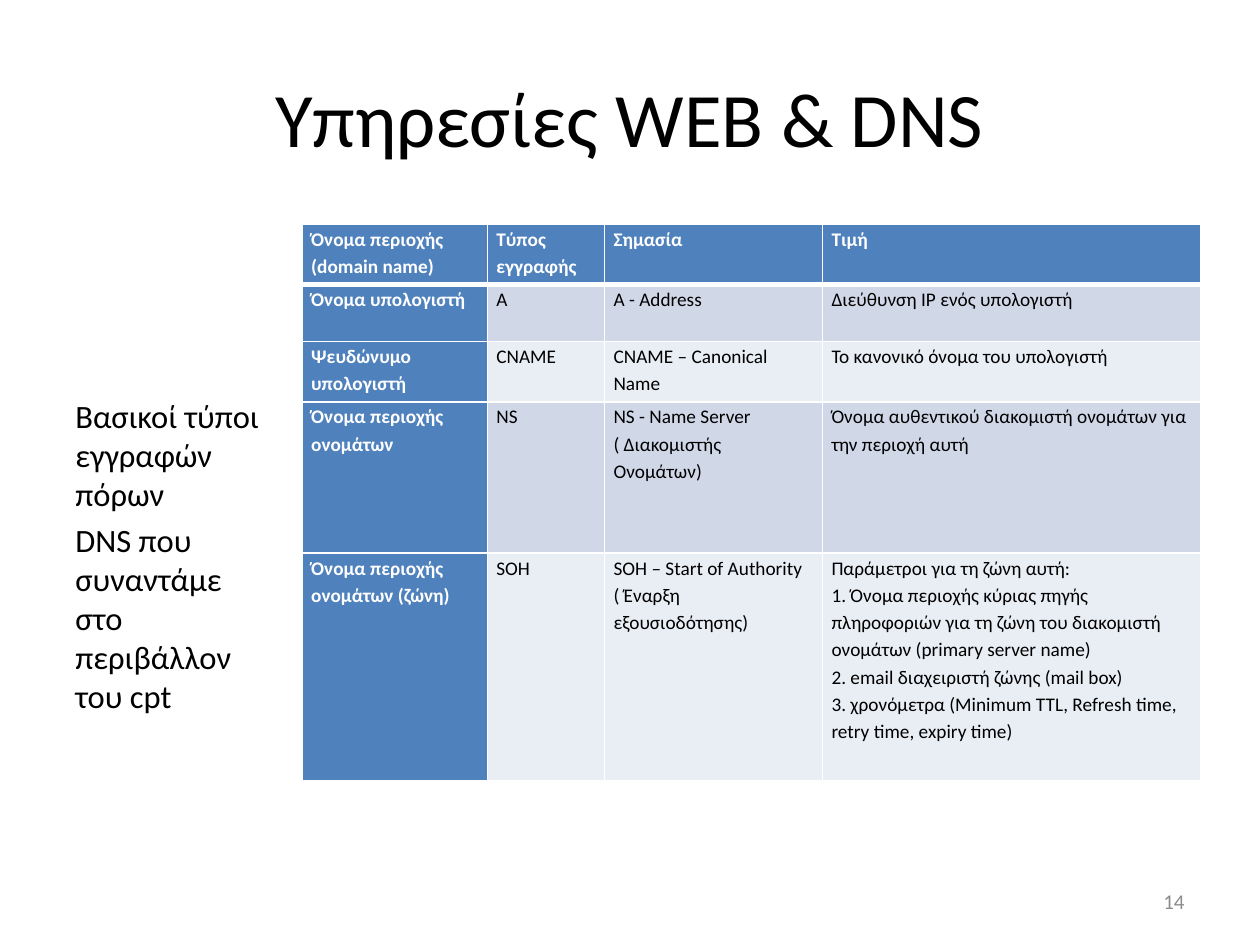
"""Build a slide with a table of the basic DNS record types."""
from lxml import etree
from pptx import Presentation
from pptx import util as u
from pptx.dml import color
from pptx.enum import text
from pptx.oxml import ns

HUES = {"ink": "000000", "white": "FFFFFF", "head": "4F81BD",
        "odd": "D0D8E8", "even": "E9EDF4", "page": "8C8C8C"}
WIDE = [1.47, 0.93, 1.73, 3]
HIGH = [0.48, 0.45, 0.48, 1.2, 1.81]
ROWS = [
    ["Όνομα περιοχής\n(domain name)", "Τύπος εγγραφής", "Σημασία", "Τιμή"],
    ["Όνομα υπολογιστή", "Α", "Α - Address", "Διεύθυνση IP ενός υπολογιστή"],
    ["Ψευδώνυμο υπολογιστή", "CNAME", "CNAME – Canonical Name",
     "Το κανονικό όνομα του υπολογιστή"],
    ["Όνομα περιοχής ονομάτων", "NS",
     "NS - Name Server\n( Διακομιστής Ονομάτων)",
     "Όνομα αυθεντικού διακομιστή ονομάτων για την περιοχή αυτή"],
    ["Όνομα περιοχής ονομάτων (ζώνη)", "SOH",
     "SOH – Start of Authority\n( Έναρξη εξουσιοδότησης)",
     "Παράμετροι για τη ζώνη αυτή:\n"
     "1. Όνομα περιοχής κύριας πηγής πληροφοριών για τη ζώνη του "
     "διακομιστή ονομάτων (primary server name)\n"
     "2. email διαχειριστή ζώνης (mail box)\n"
     "3. χρονόμετρα (Minimum TTL, Refresh time, retry time, expiry time)"],
]


def write(frame, words, size, hue="ink", bold=False, align="LEFT", line=None, gap=0):
    frame.word_wrap = True
    frame.text = words
    for i, para in enumerate(frame.paragraphs):
        para.alignment = getattr(text.PP_ALIGN, align)
        para.line_spacing = line
        para.space_before = u.Pt(gap if i else 0)
        font = para.font
        font.name, font.size, font.bold = "Calibri", u.Pt(size), bold
        font.color.rgb = color.RGBColor.from_string(HUES[hue])


def edge(cell, side, width):
    props = cell._tc.get_or_add_tcPr()
    line = etree.SubElement(props, ns.qn(f"a:ln{side}"), w=str(u.Pt(width)))
    fill = etree.SubElement(line, ns.qn("a:solidFill"))
    etree.SubElement(fill, ns.qn("a:srgbClr"), val=HUES["white"])


deck = Presentation()
deck.slide_width, deck.slide_height = u.Inches(10), u.Inches(7.5)
slide = deck.slides.add_slide(deck.slide_layouts[6])

for box, words, anchor, form in [
    ((0.5, 0.3, 9, 1.25), "Υπηρεσίες WEB & DNS", "MIDDLE",
     dict(size=44, align="CENTER")),
    ((0.5, 3.09, 1.71, 2.36),
     "Βασικοί τύποι εγγραφών πόρων\nDNS που συναντάμε στο περιβάλλον του cpt",
     "TOP", dict(size=18.6, gap=4)),
    ((7.17, 6.95, 2.33, 0.4), "14", "MIDDLE",
     dict(size=12, hue="page", align="RIGHT")),
]:
    frame = slide.shapes.add_textbox(*map(u.Inches, box)).text_frame
    frame.vertical_anchor = getattr(text.MSO_ANCHOR, anchor)
    write(frame, words, **form)

area = map(u.Inches, (2.4, 1.78, sum(WIDE), sum(HIGH)))
table = slide.shapes.add_table(len(HIGH), len(WIDE), *area).table
for col, width in zip(table.columns, WIDE):
    col.width = u.Inches(width)
for r, (row, high) in enumerate(zip(ROWS, HIGH)):
    table.rows[r].height = u.Inches(high)
    for c, words in enumerate(row):
        cell = table.cell(r, c)
        cell.margin_left = cell.margin_right = u.Inches(0.07)
        cell.margin_top = cell.margin_bottom = 0
        for side in "LRTB":
            thick = (r, side) in [(0, "B"), (1, "T")]
            edge(cell, side, 3 if thick else 1)
        head = r == 0 or c == 0
        hue = "head" if head else "odd" if r % 2 else "even"
        cell.fill.solid()
        cell.fill.fore_color.rgb = color.RGBColor.from_string(HUES[hue])
        write(cell.text_frame, words, 11, "white" if head else "ink", head, line=1.15)

deck.save("out.pptx")
